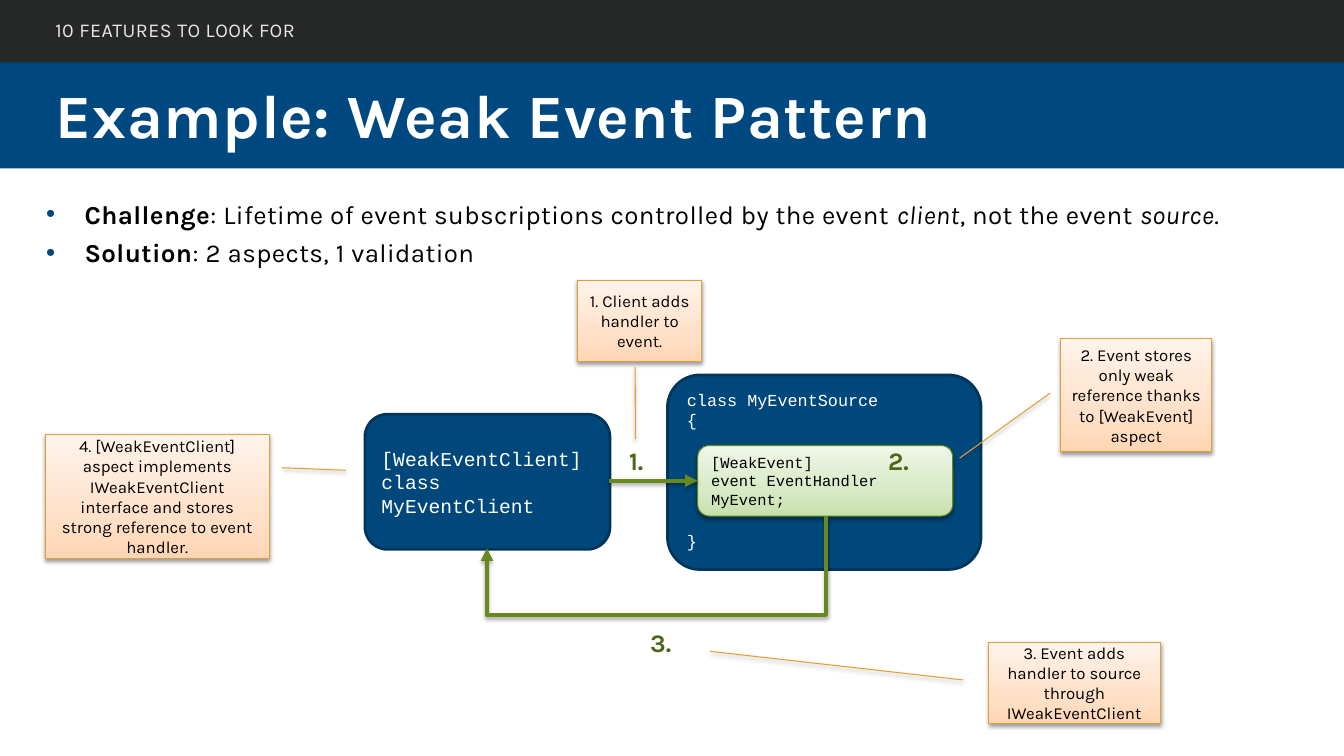
"""Builds the slide that explains the weak event pattern."""
from copy import deepcopy

from lxml import etree
from pptx import Presentation
from pptx import util as u
from pptx.dml.color import RGBColor
from pptx.enum import shapes, text
from pptx.oxml import ns

WHITE = RGBColor(0xFF, 0xFF, 0xFF)
BLACK = RGBColor(0x00, 0x00, 0x00)
PALE_GREY = RGBColor(0xE8, 0xE8, 0xE8)
CHARCOAL = RGBColor(0x26, 0x28, 0x28)
BAND_BLUE = RGBColor(0x00, 0x48, 0x80)
BLUE = RGBColor(0x00, 0x48, 0x7B)
DARK_BLUE = RGBColor(0x00, 0x35, 0x5B)
ARROW_GREEN = RGBColor(0x67, 0x89, 0x1D)
EDGE_GREEN = RGBColor(0x66, 0x89, 0x1A)
STEP_GREEN = RGBColor(0x4D, 0x67, 0x16)
ORANGE = RGBColor(0xE4, 0x9E, 0x38)
GREENS = [(0, RGBColor(0xC7, 0xE1, 0xAB)), (0.35, RGBColor(0xD7, 0xE9, 0xC5)),
          (1, RGBColor(0xF0, 0xF7, 0xE8))]
PEACHES = [(0, RGBColor(0xFF, 0xD6, 0xB3)), (0.35, RGBColor(0xFF, 0xE1, 0xC9)),
           (1, RGBColor(0xFF, 0xF3, 0xEB))]

SANS, MONO = "Karla", "Courier New"
MIDDLE = text.MSO_ANCHOR.MIDDLE
TOP = text.MSO_ANCHOR.TOP
LEFT = text.PP_ALIGN.LEFT
CENTER = text.PP_ALIGN.CENTER
ROUNDED = shapes.MSO_SHAPE.ROUNDED_RECTANGLE

CALLOUTS = [
    ((5.73, 2.78, 1.23, 0.81), (1.064, 0.464, 1.946, 0.465),
     "1. Client adds handler to event."),
    ((10.52, 3.36, 1.5, 1.12), (0.482, -0.07, 1.058, -0.668),
     "2. Event stores only weak reference thanks to [WeakEvent] aspect"),
    ((9.8, 6.37, 1.71, 0.81), (0.464, -0.145, 0.113, -1.614),
     "3. Event adds handler to source\nthrough IWeakEventClient"),
    ((0.45, 4.31, 2.22, 1.23), (0.269, 1.057, 0.29, 1.341),
     "4. [WeakEventClient] aspect implements IWeakEventClient interface "
     "and stores strong reference to event handler."),
]
STEPS = [("1.", 6.14, 4.37), ("3.", 6.35, 6.17), ("2.", 8.71, 4.37)]
BULLETS = [
    [("Challenge", {"bold": True}),
     (": Lifetime of event subscriptions controlled by the event ", {}),
     ("client", {"italic": True}), (", not the event ", {}),
     ("source", {"italic": True}), (".", {})],
    [("Solution", {"bold": True}), (": 2 aspects, 1 validation", {})],
]


def inches(values):
    return [u.Inches(value) for value in values]


def apply(target, values):
    for name, value in values.items():
        setattr(target, name, value)


def add_xml(parent, tag, **attributes):
    return etree.SubElement(parent, ns.qn(tag), attributes)


def write_span(para, words, name, size, color, spacing=0, **look):
    for index, line in enumerate(words.split("\n")):
        if index:
            para.add_line_break()
            para._p[-1].append(deepcopy(span._r.rPr))
        span = para.add_run()
        span.text = line
        apply(span.font, {"name": name, "size": u.Pt(size), **look})
        span.font.color.rgb = color
        if spacing:
            span._r.rPr.set("spc", str(spacing))


def write_text(box, paragraphs, font, align=LEFT, anchor=TOP, gap=0, **layout):
    frame = box.text_frame
    apply(frame, {"word_wrap": True, "vertical_anchor": anchor, **layout})
    for index, spans in enumerate(paragraphs):
        para = frame.add_paragraph() if index else frame.paragraphs[0]
        para.alignment = align
        if index:
            para.space_before = u.Pt(gap)
        for words, look in spans:
            write_span(para, words, **{**font, **look})


def add_shadow(shape, alpha, distance):
    effects = add_xml(shape._element.spPr, "a:effectLst")
    shadow = add_xml(effects, "a:outerShdw", blurRad=str(u.Pt(3.1)),
                     dist=str(u.Pt(distance)), dir="5400000", rotWithShape="0")
    color = add_xml(shadow, "a:srgbClr", val="000000")
    add_xml(color, "a:alpha", val=str(alpha * 1000))


def fill_gradient(shape, stops):
    shape.fill.gradient()
    shape.fill.gradient_angle = 90
    listing = shape._element.spPr.find(".//" + ns.qn("a:gsLst"))
    listing.append(deepcopy(listing[0]))
    for stop, (position, color) in zip(shape.fill.gradient_stops, stops):
        stop.position = position
        stop.color.rgb = color


def set_line(shape, color, width):
    shape.line.color.rgb = color
    shape.line.width = u.Pt(width)


def add_band(page, top, height, color):
    band = page.shapes.add_shape(shapes.MSO_SHAPE.RECTANGLE,
                                 *inches((0, top, 13.33, height)))
    band.shadow.inherit = False
    band.fill.solid()
    band.fill.fore_color.rgb = color
    band.line.fill.background()


def add_class_box(page, place, paragraphs, size, **layout):
    box = page.shapes.add_shape(ROUNDED, *inches(place))
    box.shadow.inherit = False
    box.fill.solid()
    box.fill.fore_color.rgb = BLUE
    set_line(box, DARK_BLUE, 2)
    write_text(box, paragraphs, {"name": MONO, "size": size, "color": WHITE}, **layout)


def add_gradient_box(page, kind, place, stops, edge, words, font, **layout):
    box = page.shapes.add_shape(kind, *inches(place))
    fill_gradient(box, stops)
    set_line(box, edge, 0.75)
    add_shadow(box, 38, 1.6)
    write_text(box, [[(words, {})]], {**font, "color": BLACK}, anchor=MIDDLE, **layout)
    return box


def add_arrow(page, kind, ends):
    arrow = page.shapes.add_connector(kind, *inches(ends))
    set_line(arrow, ARROW_GREEN, 3)
    add_xml(arrow.line._get_or_add_ln(), "a:tailEnd", type="triangle")
    add_shadow(arrow, 35, 1.8)
    return arrow


def add_return_arrow(page):
    arrow = add_arrow(page, shapes.MSO_CONNECTOR.ELBOW, (6.35, 3.6, 6.67, 6.96))
    properties = arrow._element.spPr
    properties.find(ns.qn("a:xfrm")).set("rot", "5400000")
    guides = properties.find(".//" + ns.qn("a:avLst"))
    add_xml(guides, "a:gd", name="adj1", fmla="val 305900")


def add_label(page, place, paragraphs, font, **layout):
    box = page.shapes.add_textbox(*inches(place))
    write_text(box, paragraphs, {"name": SANS, **font}, **layout)
    return box


def add_bullets(page):
    box = add_label(page, (0.36, 1.98, 12.52, 0.79), BULLETS,
                    {"size": 18.5, "color": BLACK, "spacing": 30}, gap=3.7)
    for para in box.text_frame.paragraphs:
        properties = para._p.get_or_add_pPr()
        properties.set("marL", str(u.Inches(0.38)))
        properties.set("indent", str(u.Inches(-0.38)))
        color = add_xml(properties, "a:buClr")
        add_xml(color, "a:srgbClr", val=str(BLUE))
        add_xml(properties, "a:buFont", typeface="Arial")
        add_xml(properties, "a:buChar", char="•")
        apply(para, {"line_spacing": 0.8, "space_after": u.Pt(6)})


def add_title(page):
    title = page.shapes.title
    apply(title, dict(zip(("left", "top", "width", "height"),
                          inches((0.45, 0.62, 12.32, 0.93)))))
    write_text(title, [[("Example: Weak Event Pattern", {})]],
               {"name": SANS, "size": 44, "color": WHITE, "bold": True, "spacing": 50},
               anchor=text.MSO_ANCHOR.BOTTOM, auto_size=text.MSO_AUTO_SIZE.NONE)
    page.shapes._spTree.append(title._element)


def main():
    deck = Presentation()
    deck.slide_width, deck.slide_height = inches((13.33, 7.5))
    page = deck.slides.add_slide(deck.slide_layouts[5])
    add_band(page, 0.6, 1.07, BAND_BLUE)
    add_band(page, 0, 0.62, CHARCOAL)
    add_title(page)
    add_bullets(page)
    add_label(page, (0.45, 0.13, 8.43, 0.39), [[("10 FEATURES TO LOOK FOR", {})]],
              {"size": 14, "color": PALE_GREY, "spacing": 30})
    add_class_box(page, (3.62, 4.11, 2.43, 1.34),
                  [[("[WeakEventClient]\nclass MyEventClient", {})]], 14, anchor=MIDDLE)
    add_class_box(page, (6.62, 3.72, 3.11, 1.93),
                  [[("class MyEventSource\n{", {})], [("}", {})]], 12, gap=72)
    add_gradient_box(page, ROUNDED, (6.92, 4.42, 2.53, 0.7), GREENS, EDGE_GREEN,
                     "[WeakEvent]\nevent EventHandler MyEvent;", {"name": MONO, "size": 11})
    add_arrow(page, shapes.MSO_CONNECTOR.STRAIGHT, (6.04, 4.77, 6.92, 4.77))
    add_return_arrow(page)
    for number, left, top in STEPS:
        add_label(page, (left, top, 0.42, 0.4), [[(number, {})]],
                  {"size": 18, "color": STEP_GREEN, "bold": True},
                  word_wrap=False, auto_size=text.MSO_AUTO_SIZE.SHAPE_TO_FIT_TEXT)
    for place, pointer, words in CALLOUTS:
        callout = add_gradient_box(page, shapes.MSO_SHAPE.LINE_CALLOUT_1, place, PEACHES,
                                   ORANGE, words, {"name": SANS, "size": 12}, align=CENTER)
        for index, value in enumerate(pointer):
            callout.adjustments[index] = value
    deck.save("out.pptx")


if __name__ == "__main__":
    main()
